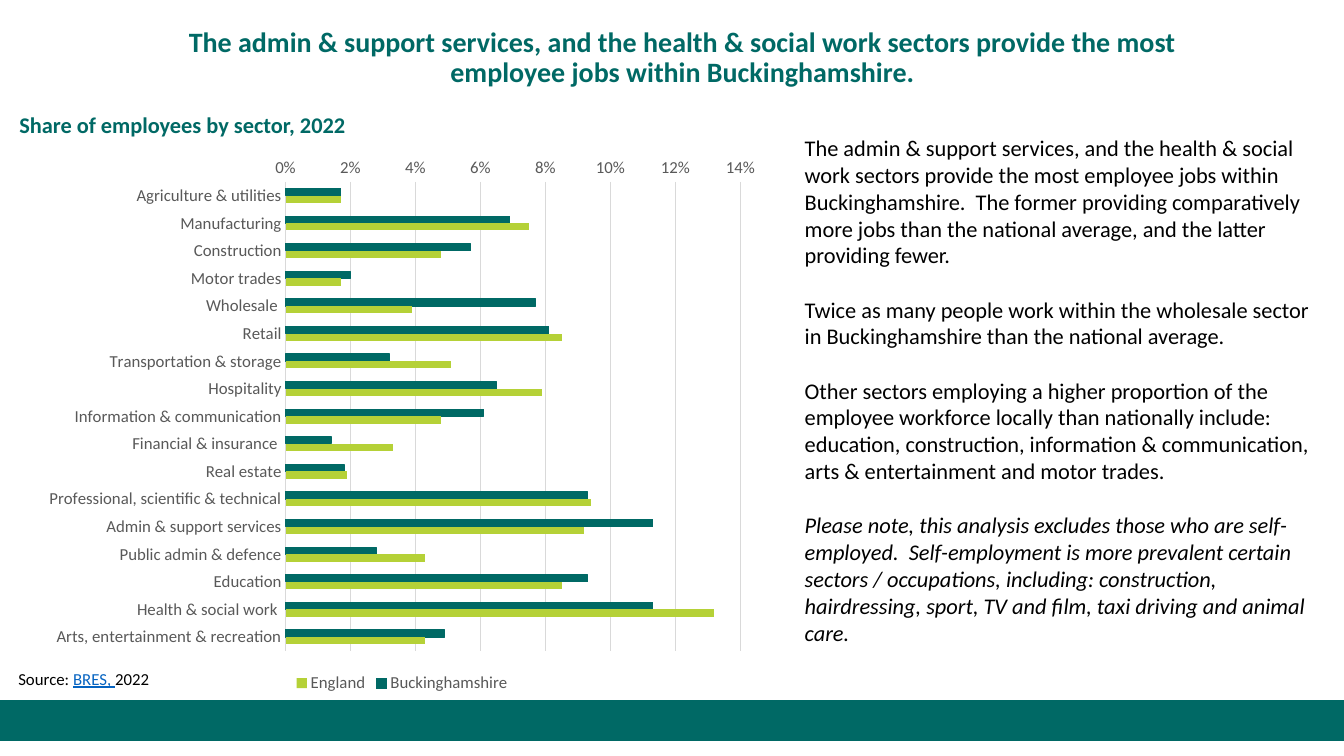
from pptx import Presentation
from pptx.chart.data import CategoryChartData
from pptx.dml.color import RGBColor
from pptx.enum.chart import XL_CHART_TYPE, XL_LEGEND_POSITION, XL_TICK_MARK
from pptx.enum.shapes import MSO_SHAPE
from pptx.enum.text import MSO_ANCHOR, PP_ALIGN
from pptx.util import Pt

PX = 9525  # EMU per pixel, 96 pixels to the inch
FONT = "Calibri"
TEAL = RGBColor(0x00, 0x69, 0x65)
LIME = RGBColor(0xB5, 0xD1, 0x37)
BLACK = RGBColor(0x00, 0x00, 0x00)
GREY = RGBColor(0x59, 0x59, 0x59)
GRID = RGBColor(0xD9, 0xD9, 0xD9)
LINK = RGBColor(0x05, 0x63, 0xC1)
BAR_CLUSTERED = XL_CHART_TYPE.BAR_CLUSTERED
LEGEND_BOTTOM = XL_LEGEND_POSITION.BOTTOM
NO_TICK = XL_TICK_MARK.NONE
RECTANGLE = MSO_SHAPE.RECTANGLE
MIDDLE = MSO_ANCHOR.MIDDLE
CENTER = PP_ALIGN.CENTER


def add_text_frame(left, top, width, height):
    box = slide.shapes.add_textbox(left * PX, top * PX, width * PX, height * PX)
    box.text_frame.word_wrap = True
    return box.text_frame


def write(paragraph, text, size=16, color=BLACK, bold=False, italic=False, underline=False):
    run = paragraph.add_run()
    run.text = text
    font = run.font
    font.name, font.size, font.color.rgb = FONT, Pt(size), color
    font.bold, font.italic, font.underline = bold, italic, underline


presentation = Presentation()
presentation.slide_width = 1280 * PX
presentation.slide_height = 720 * PX
slide = presentation.slides.add_slide(presentation.slide_layouts[6])

# Footer band
band = slide.shapes.add_shape(RECTANGLE, 0, 667 * PX, 1280 * PX, 38 * PX)
band.shadow.inherit = False
band.fill.solid()
band.fill.fore_color.rgb = TEAL
band.line.color.rgb = TEAL
band.line.width = Pt(1)

# Title
title = add_text_frame(145, 16, 1010, 79)
title.vertical_anchor = MIDDLE
title.paragraphs[0].alignment = CENTER
title.paragraphs[0].line_spacing = 0.9
write(title.paragraphs[0],
      "The admin & support services, and the health & social work sectors "
      "provide the most employee jobs within Buckinghamshire.",
      size=20, color=TEAL, bold=True)

# Source line
source = add_text_frame(8, 632, 406, 29).paragraphs[0]
write(source, "Source: ", size=12)
write(source, "BRES, ", size=12, color=LINK, underline=True)
write(source, "2022", size=12)

# Sector shares: name, Buckinghamshire, England
SECTORS = [
    ("Agriculture & utilities", 0.017, 0.017),
    ("Manufacturing", 0.069, 0.075),
    ("Construction", 0.057, 0.048),
    ("Motor trades", 0.02, 0.017),
    ("Wholesale ", 0.077, 0.039),
    ("Retail", 0.081, 0.085),
    ("Transportation & storage", 0.032, 0.051),
    ("Hospitality", 0.065, 0.079),
    ("Information & communication", 0.061, 0.048),
    ("Financial & insurance ", 0.014, 0.033),
    ("Real estate", 0.018, 0.019),
    ("Professional, scientific & technical", 0.093, 0.094),
    ("Admin & support services", 0.113, 0.092),
    ("Public admin & defence", 0.028, 0.043),
    ("Education", 0.093, 0.085),
    ("Health & social work ", 0.113, 0.132),
    ("Arts, entertainment & recreation", 0.049, 0.043),
]
names, buckinghamshire, england = zip(*SECTORS)
chart_data = CategoryChartData(number_format="0%")
chart_data.categories = names
chart_data.add_series("Buckinghamshire", buckinghamshire)
chart_data.add_series("England", england)

# Chart
chart = slide.shapes.add_chart(
    BAR_CLUSTERED, 33 * PX, 140 * PX, 700 * PX, 524 * PX, chart_data).chart
chart.has_title = False
chart.has_legend = True
chart.legend.position = LEGEND_BOTTOM
chart.legend.include_in_layout = False

plot = chart.plots[0]
plot.gap_width = 182
plot.overlap = 0
plot.vary_by_categories = False
for series, color in zip(plot.series, (TEAL, LIME)):
    series.invert_if_negative = False
    series.format.fill.solid()
    series.format.fill.fore_color.rgb = color
teal_line = plot.series[0].format.line
teal_line.color.rgb = TEAL
teal_line.width = Pt(0.75)

# Axes
sector_axis, share_axis = chart.category_axis, chart.value_axis
sector_axis.reverse_order = True
share_axis.minimum_scale = 0
share_axis.maximum_scale = 0.14
share_axis.major_unit = 0.02
share_axis.has_major_gridlines = True
share_axis.tick_labels.number_format = "0%"
share_axis.tick_labels.number_format_is_linked = False
share_axis.format.line.fill.background()
for axis in (sector_axis, share_axis):
    axis.major_tick_mark = NO_TICK
    axis.minor_tick_mark = NO_TICK
for line in (sector_axis.format.line, share_axis.major_gridlines.format.line):
    line.color.rgb = GRID
    line.width = Pt(0.75)
for font in (chart.font, chart.legend.font,
             sector_axis.tick_labels.font, share_axis.tick_labels.font):
    font.name, font.size, font.color.rgb = FONT, Pt(12), GREY

# Commentary
COMMENTS = [
    "The admin & support services, and the health & social work sectors provide "
    "the most employee jobs within Buckinghamshire.  The former providing "
    "comparatively more jobs than the national average, and the latter providing fewer.",
    "Twice as many people work within the wholesale sector in Buckinghamshire "
    "than the national average.",
    "Other sectors employing a higher proportion of the employee workforce locally "
    "than nationally include: education, construction, information & communication, "
    "arts & entertainment and motor trades.",
    "Please note, this analysis excludes those who are self-employed.  "
    "Self-employment is more prevalent certain sectors / occupations, including: "
    "construction, hairdressing, sport, TV and film, taxi driving and animal care.",
]
commentary = add_text_frame(757, 123, 514, 501)
for index, comment in enumerate(COMMENTS):
    paragraph = commentary.add_paragraph() if index else commentary.paragraphs[0]
    if index:
        paragraph.space_before = Pt(19.5)
    write(paragraph, comment, italic=index == len(COMMENTS) - 1)

# Chart heading
heading = add_text_frame(9, 101, 366, 36)
write(heading.paragraphs[0], "Share of employees by sector, 2022", color=TEAL, bold=True)

presentation.save("out.pptx")
